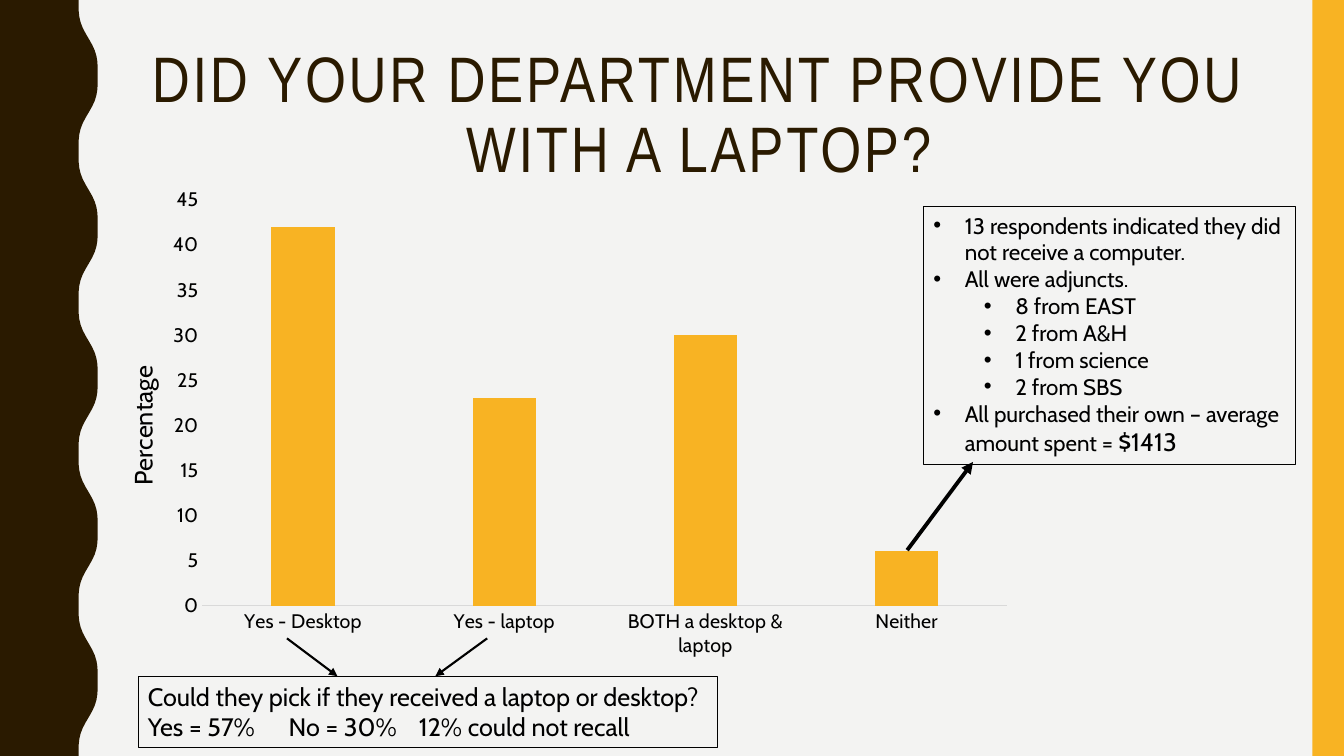
from dataclasses import dataclass
from math import cos, pi

from lxml.etree import SubElement
from pptx import Presentation
from pptx.chart.data import CategoryChartData
from pptx.dml.color import RGBColor
from pptx.enum.chart import XL_CHART_TYPE as ChartType, XL_TICK_MARK as TickMark
from pptx.enum.shapes import MSO_CONNECTOR as Connector, MSO_SHAPE as Shape
from pptx.enum.text import MSO_ANCHOR as Anchor, MSO_AUTO_SIZE as AutoSize, PP_ALIGN as Align
from pptx.oxml import parse_xml
from pptx.oxml.ns import nsdecls, qn
from pptx.util import Pt


@dataclass(frozen=True)
class Theme:
    background: RGBColor = RGBColor(0xF3, 0xF3, 0xF2)
    dark: RGBColor = RGBColor(0x2A, 0x1A, 0x00)
    accent: RGBColor = RGBColor(0xF8, 0xB3, 0x23)
    ink: RGBColor = RGBColor(0, 0, 0)
    axis: RGBColor = RGBColor(0xD9, 0xD9, 0xD9)
    title_font: str = "Arial Narrow"
    body_font: str = "Cabin"
    title_size: float = 45.9
    large_size: int = 18
    list_size: int = 16
    label_size: int = 14


THEME = Theme()
SLIDE_WIDTH, SLIDE_HEIGHT = 960, 540

FINDINGS = [
    (0, "13 respondents indicated they did not receive a computer."),
    (0, "All were adjuncts."),
    (1, "8 from EAST"),
    (1, "2 from A&H"),
    (1, "1 from science"),
    (1, "2 from SBS"),
    (0, "All purchased their own – average amount spent = "),
]
AVERAGE_SPENT = "$1413"
ANSWERS = {"Yes - Desktop": 42, "Yes - laptop": 23, "BOTH a desktop & laptop": 30, "Neither": 6}


def set_font(font, size, color=THEME.ink, name=THEME.body_font):
    font.name = name
    font.size = Pt(size)
    font.bold = False
    font.color.rgb = color


def place(shape, left, top, width, height):
    shape.left, shape.top = Pt(left), Pt(top)
    shape.width, shape.height = Pt(width), Pt(height)


def fill_plain(shape, color):
    shape.shadow.inherit = False
    shape.fill.solid()
    shape.fill.fore_color.rgb = color
    shape.line.fill.background()


def outline(shape):
    shape.line.color.rgb = THEME.ink
    shape.line.width = Pt(0.75)


def prepare_frame(shape):
    frame = shape.text_frame
    frame.word_wrap = True
    frame.auto_size = AutoSize.NONE
    frame.vertical_anchor = Anchor.TOP
    return frame


def add_wavy_edge(slide):
    middle, swing, flattening, period = 63, 7.7, 0.85, 108
    points = []
    for y in range(0, SLIDE_HEIGHT + 1, 4):
        angle = 2 * pi * y / period
        x = middle - swing * cos(angle) + flattening * cos(3 * angle)
        points.append((Pt(x), Pt(y)))
    builder = slide.shapes.build_freeform(0, 0)
    builder.add_line_segments([*points, (0, Pt(SLIDE_HEIGHT))], close=True)
    fill_plain(builder.convert_to_shape(), THEME.dark)


def add_side_bar(slide):
    width = 22.5
    bar = slide.shapes.add_shape(
        Shape.RECTANGLE, Pt(SLIDE_WIDTH - width), 0, Pt(width), Pt(SLIDE_HEIGHT)
    )
    fill_plain(bar, THEME.accent)


def fill_title(title, text):
    place(title, 98.6, 30.2, 801.4, 56.9)
    paragraph = prepare_frame(title).paragraphs[0]
    run = paragraph.add_run()
    run.text = text
    paragraph.alignment = Align.CENTER
    paragraph.line_spacing = 0.9
    set_font(paragraph.font, THEME.title_size, THEME.dark, THEME.title_font)
    run.font._element.set("spc", "200")


def fill_findings(body):
    place(body, 659.5, 147.6, 265.7, 184.3)
    outline(body)
    frame = prepare_frame(body)
    for index, (level, text) in enumerate(FINDINGS):
        paragraph = frame.paragraphs[0] if index == 0 else frame.add_paragraph()
        paragraph.text = text
        paragraph.level = level
        paragraph.space_before = Pt(0)
        set_font(paragraph.font, THEME.list_size)
        properties = paragraph._p.get_or_add_pPr()
        properties.set("marL", str(Pt(22.5 + 36 * level)))
        properties.set("indent", str(Pt(-22.5)))
        bullet_font = parse_xml(f'<a:buFont {nsdecls("a")} typeface="Arial"/>')
        bullet = parse_xml(f'<a:buChar {nsdecls("a")} char="•"/>')
        properties.find(qn("a:defRPr")).addprevious(bullet_font)
        bullet_font.addnext(bullet)
    amount = paragraph.add_run()
    amount.text = AVERAGE_SPENT
    amount.font.size = Pt(THEME.large_size)


def manual_layout(parent, **values):
    layout = parent.get_or_add_layout() if hasattr(parent, "get_or_add_layout") else None
    if layout is None:
        layout = parent.find(qn("c:layout"))
    if layout is None:
        layout = parent.makeelement(qn("c:layout"))
        parent.insert(1 if parent.tag == qn("c:title") else 0, layout)
    for child in list(layout):
        layout.remove(child)
    manual = SubElement(layout, qn("c:manualLayout"))
    for name, value in values.items():
        SubElement(manual, qn(f"c:{name}")).set("val", str(value))


def add_answer_chart(slide):
    data = CategoryChartData()
    data.categories = list(ANSWERS)
    data.add_series("Series 1", list(ANSWERS.values()))
    chart = slide.shapes.add_chart(
        ChartType.COLUMN_CLUSTERED, Pt(80), Pt(129), Pt(646), Pt(349), data
    ).chart
    chart.has_legend = False
    chart.has_title = False
    set_font(chart.font, THEME.label_size)
    space = chart._chartSpace
    space.find(qn("c:txPr")).addprevious(
        parse_xml(f'<c:spPr {nsdecls("c", "a")}><a:noFill/><a:ln><a:noFill/></a:ln></c:spPr>')
    )
    plot = chart.plots[0]
    plot.vary_by_categories = False
    plot.gap_width = 219
    plot.overlap = -27
    columns = plot.series[0].format
    columns.fill.solid()
    columns.fill.fore_color.rgb = THEME.accent

    for axis in (chart.category_axis, chart.value_axis):
        axis.has_major_gridlines = False
        axis.major_tick_mark = axis.minor_tick_mark = TickMark.NONE
        set_font(axis.tick_labels.font, THEME.label_size)
    chart.category_axis.format.line.color.rgb = THEME.axis
    chart.category_axis.format.line.width = Pt(0.75)
    values = chart.value_axis
    values.format.line.fill.background()
    values.minimum_scale, values.maximum_scale, values.major_unit = 0, 45, 5
    paragraph = values.axis_title.text_frame.paragraphs[0]
    paragraph.text = "Percentage"
    set_font(paragraph.font, THEME.large_size)
    manual_layout(values.axis_title._element, xMode="edge", yMode="edge", x=0.01, y=0.37)
    manual_layout(
        space.find(f'.//{qn("c:plotArea")}'), layoutTarget="inner",
        xMode="edge", yMode="edge", x=0.1, y=0.04, w=0.89, h=0.83,
    )


def add_choice_box(slide):
    box = slide.shapes.add_textbox(Pt(98.6), Pt(483.1), Pt(414), Pt(51))
    outline(box)
    frame = prepare_frame(box)
    frame.text = "Could they pick if they received a laptop or desktop?\nYes = 57%\tNo = 30%\t12% could not recall"
    for paragraph in frame.paragraphs:
        set_font(paragraph.font, THEME.large_size)
    tabs = parse_xml(
        f'<a:tabLst {nsdecls("a")}><a:tab pos="{Pt(100.5)}" algn="l"/>'
        f'<a:tab pos="{Pt(193.5)}" algn="l"/></a:tabLst>'
    )
    paragraph._p.pPr.find(qn("a:defRPr")).addprevious(tabs)


def add_arrow(slide, start, end, width):
    arrow = slide.shapes.add_connector(Connector.STRAIGHT, *map(Pt, (*start, *end)))
    arrow.line.color.rgb = THEME.ink
    arrow.line.width = Pt(width)
    SubElement(arrow.line._get_or_add_ln(), qn("a:tailEnd")).set("type", "triangle")
    SubElement(arrow._element.spPr, qn("a:effectLst"))


def main():
    presentation = Presentation()
    presentation.slide_width, presentation.slide_height = Pt(SLIDE_WIDTH), Pt(SLIDE_HEIGHT)
    slide = presentation.slides.add_slide(presentation.slide_layouts[1])
    slide.background.fill.solid()
    slide.background.fill.fore_color.rgb = THEME.background
    add_wavy_edge(slide)
    add_side_bar(slide)
    fill_title(slide.shapes.title, "DID YOUR DEPARTMENT PROVIDE YOU WITH A LAPTOP?")
    add_answer_chart(slide)
    fill_findings(slide.placeholders[1])
    add_choice_box(slide)
    add_arrow(slide, (648, 393), (695, 330), 2.75)
    add_arrow(slide, (205, 456), (241, 483), 1.5)
    add_arrow(slide, (348, 456), (311, 483), 1.5)
    presentation.save("out.pptx")


if __name__ == "__main__":
    main()
